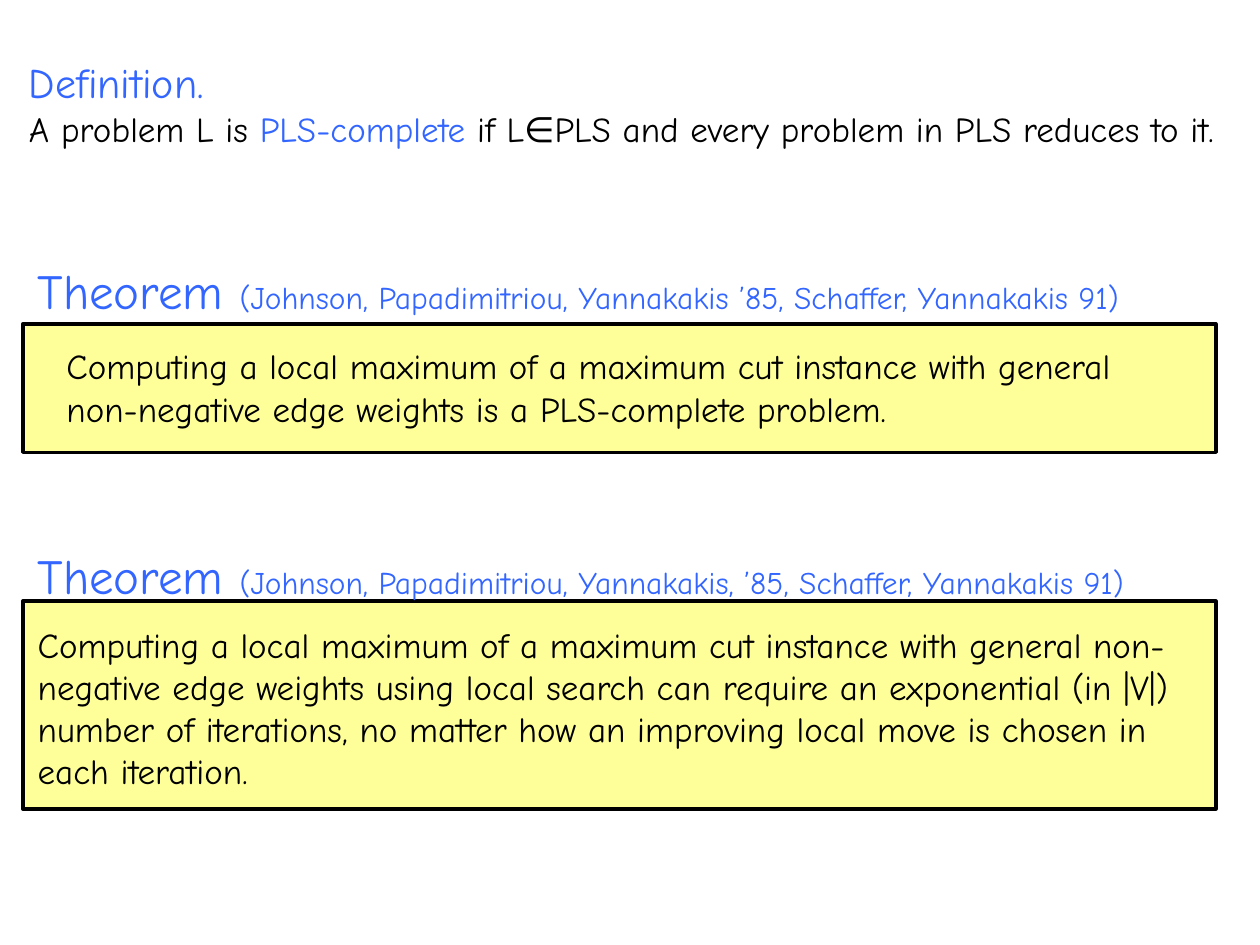
from dataclasses import dataclass

from pptx import Presentation
from pptx.dml.color import RGBColor as RGB
from pptx.enum.shapes import MSO_SHAPE as Shape
from pptx.enum.text import MSO_ANCHOR as Anchor, MSO_AUTO_SIZE as AutoSize, PP_ALIGN as Align
from pptx.util import Cm, Pt


@dataclass(frozen=True)
class Theme:
    """Colours, font and type sizes."""
    font: str = "Comic Neue"
    accent: RGB = RGB(0x33, 0x66, 0xFF)
    ink: RGB = RGB(0, 0, 0)
    panel: RGB = RGB(0xFF, 0xFF, 0x99)
    theorem: int = 28
    heading: int = 24
    body: int = 20
    cite: int = 18
    border: int = 2


THEME = Theme()


def add_run(p, text, size=THEME.body, color=THEME.ink, font=THEME.font):
    """Append formatted text to a paragraph."""
    r = p.add_run()
    r.text = text
    r.font.size, r.font.name, r.font.color.rgb = Pt(size), font, color


class Deck:
    """Style and current slide."""

    def __init__(self, theme, width, height):
        """Start a presentation with one slide."""
        self.theme = theme
        self.prs = Presentation()
        self.prs.slide_width, self.prs.slide_height = Cm(width), Cm(height)
        self.s = self.prs.slides.add_slide(self.prs.slide_layouts[5])

    def fill_text(self, sp, paragraphs):
        """Write paragraphs of (text, format) runs into a shape."""
        tf = sp.text_frame
        tf.word_wrap, tf.auto_size = True, AutoSize.NONE
        tf.vertical_anchor = Anchor.TOP
        for i, runs in enumerate(paragraphs):
            p = tf.add_paragraph() if i else tf.paragraphs[0]
            p.alignment = Align.LEFT
            for text, style in runs:
                add_run(p, text, **style)

    def title(self, box, paragraphs):
        """Place and fill the title placeholder."""
        sp = self.s.shapes.title
        sp.left, sp.top, sp.width, sp.height = map(Cm, box)
        self.fill_text(sp, paragraphs)

    def text(self, box, runs):
        """Add a text box with one paragraph."""
        self.fill_text(self.s.shapes.add_textbox(*map(Cm, box)), [runs])

    def panel(self, box):
        """Add a bordered rectangle."""
        sp = self.s.shapes.add_shape(Shape.RECTANGLE, *map(Cm, box))
        sp.shadow.inherit = False
        sp.fill.solid()
        sp.fill.fore_color.rgb = self.theme.panel
        sp.line.color.rgb = self.theme.ink
        sp.line.width = Pt(self.theme.border)

    def theorem(self, top, height, head_top, cite, body_box, statement):
        """Add a theorem: panel, statement and heading."""
        t = self.theme
        self.panel((0.46, top, 24.05, height))
        self.text(body_box, [(statement, {})])
        self.text((0.51, head_top, 24.7, 1.45), [
            ("Theorem ", dict(size=t.theorem, color=t.accent)),
            (cite, dict(size=t.cite, color=t.accent)),
        ])


def main():
    """Build and save the slide."""
    deck = Deck(THEME, 25.4, 19.05)
    accent = dict(color=THEME.accent)
    deck.title((0.33, 1.02, 25.07, 2.31), [
        [("Definition.", dict(size=THEME.heading, **accent))],
        [("A problem L is ", {}), ("PLS-complete", accent),
         (" if L∈PLS and every problem in PLS reduces to it.", {})],
    ])
    deck.theorem(
        6.53, 2.59, 5.13,
        "(Johnson, Papadimitriou, Yannakakis ’85, Schaffer, Yannakakis 91)",
        (1.09, 6.83, 22.61, 1.96),
        "Computing a local maximum of a maximum cut instance with general "
        "non-negative edge weights is a PLS-complete problem.")
    deck.theorem(
        12.12, 4.19, 10.87,
        "(Johnson, Papadimitriou, Yannakakis, ’85, Schaffer, Yannakakis 91)",
        (0.51, 12.45, 24, 3.68),
        "Computing a local maximum of a maximum cut instance with general "
        "non-negative edge weights using local search can require an exponential "
        "(in |V|) number of iterations, no matter how an improving local move is "
        "chosen in each iteration.")
    deck.prs.save("out.pptx")


if __name__ == "__main__":
    main()
